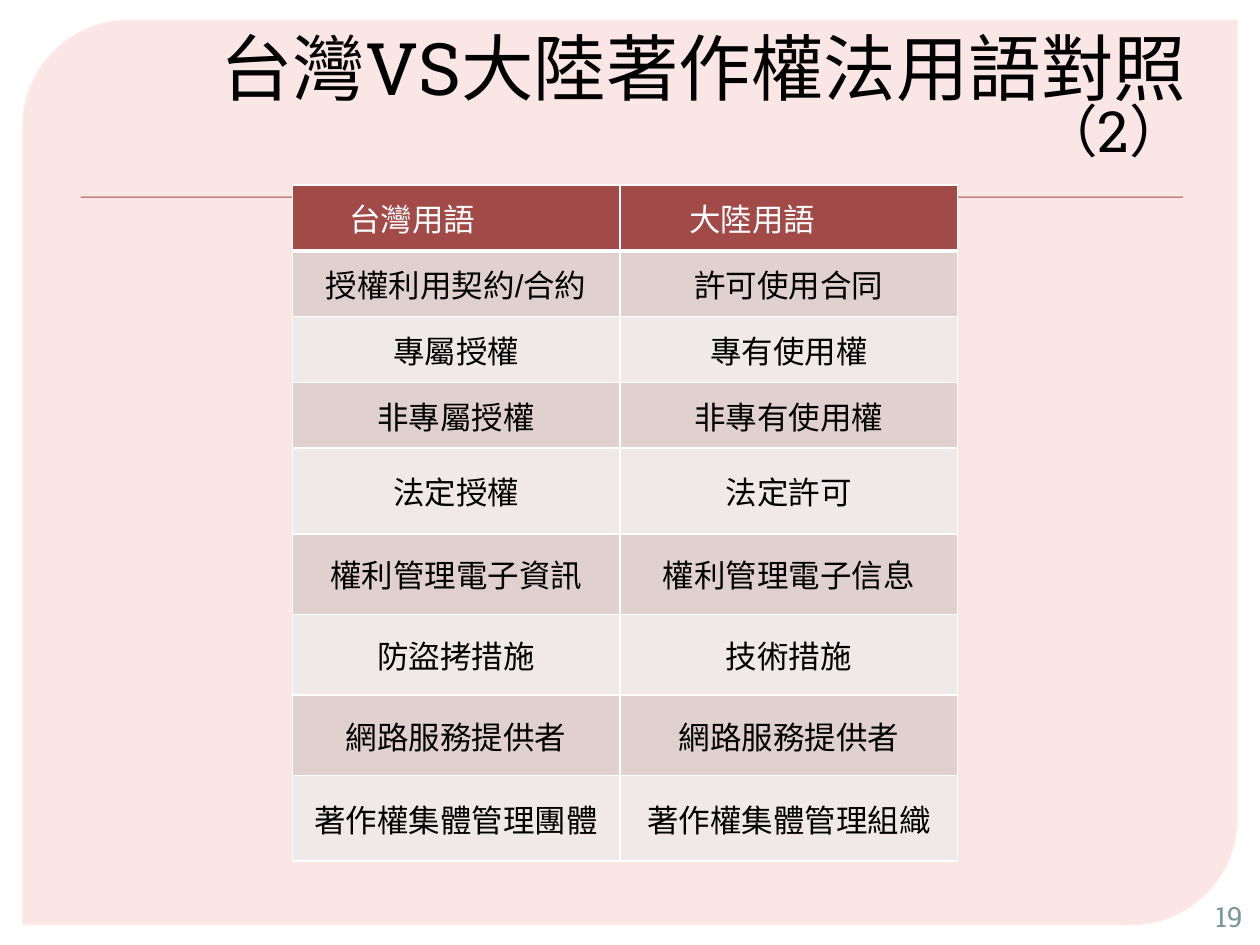
"""Build a slide comparing Taiwan and mainland copyright terms."""
from lxml import etree
from pptx import Presentation
from pptx.dml.color import RGBColor
from pptx.enum.shapes import MSO_SHAPE
from pptx.enum.text import MSO_ANCHOR, PP_ALIGN
from pptx.oxml.ns import qn
from pptx.util import Inches, Pt

PANEL, RULE = MSO_SHAPE.ROUND_2_DIAG_RECTANGLE, MSO_SHAPE.RECTANGLE
LEFT, CENTER, RIGHT = PP_ALIGN.LEFT, PP_ALIGN.CENTER, PP_ALIGN.RIGHT
MIDDLE, BOTTOM = MSO_ANCHOR.MIDDLE, MSO_ANCHOR.BOTTOM

TITLE = [("台灣VS大陸著作權法用語對照", "title"), ("（2）", "part")]
PAGE_NUMBER = [("19", "number")]
TERMS = [
    ("台灣用語", "大陸用語"),
    ("授權利用契約/合約", "許可使用合同"),
    ("專屬授權", "專有使用權"),
    ("非專屬授權", "非專有使用權"),
    ("法定授權", "法定許可"),
    ("權利管理電子資訊", "權利管理電子信息"),
    ("防盜拷措施", "技術措施"),
    ("網路服務提供者", "網路服務提供者"),
    ("著作權集體管理團體", "著作權集體管理組織"),
]

THEME = {
    "panel": "F9DADA", "panel_line": "FFECEC", "accent": "A24A48",
    "bands": ("F0E9E9", "E0D0CF"), "border": "FFFFFF",
    "title": {"name": "Roboto Slab", "size": 41.4, "color": "000000"},
    "part": {"name": "Roboto Slab", "size": 32.4, "color": "000000"},
    "number": {"name": "Roboto Slab", "size": 16, "color": "7C999A"},
    "header": {"name": "Arial", "size": 18, "color": "FFFFFF"},
    "body": {"name": "Arial", "size": 18, "color": "000000"},
}

SLIDE_SIZE = Inches(10), Inches(7.5)
PLACES = {
    "panel": (1.8, 2.13, 96.4, 95.73),
    "rule": (6.4, 20.8, 87.5, 0.13),
    "title": (5.1, 4.8, 90, 12.53),
    "table": (23.2, 19.6, 52.8, 71.33),
    "number": (94.5, 94.93, 5.1, 4),
}
COLUMN_SHARES = [26, 26.8]
ROW_SHARES = [6.96] * 4 + [9.07] + [8.53] * 3 + [9.07]
HEADER_INDENTS = [4.5, 5.5]


def across(share):
    return round(SLIDE_SIZE[0] * share / 100)


def down(share):
    return round(SLIDE_SIZE[1] * share / 100)


def place(name):
    left, top, width, height = PLACES[name]
    return across(left), down(top), across(width), down(height)


def apply(target, values):
    for name, value in values.items():
        setattr(target, name, value)


def paint(fill, color):
    fill.solid()
    fill.fore_color.rgb = RGBColor.from_string(color)


def write(frame, spans, align):
    para = frame.paragraphs[0]
    para.alignment = align
    for text, style in spans:
        span = para.add_run()
        span.text = text
        look = THEME[style]
        apply(span.font, {"name": look["name"], "size": Pt(look["size"])})
        span.font.color.rgb = RGBColor.from_string(look["color"])
    return para


def add_panel(page):
    panel = page.shapes.add_shape(PANEL, *place("panel"))
    panel.shadow.inherit = False
    panel.adjustments[0] = 0.118
    panel.adjustments[1] = 0
    paint(panel.fill, THEME["panel"])
    paint(panel.line.fill, THEME["panel_line"])
    panel.line.width = Pt(0.87)
    colors = panel.element.spPr.iter(qn("a:srgbClr"))
    for color, opacity in zip(list(colors), (65, 88)):
        etree.SubElement(color, qn("a:alpha"), val=str(opacity * 1000))


def add_rule(page):
    rule = page.shapes.add_shape(RULE, *place("rule"))
    rule.shadow.inherit = False
    paint(rule.fill, THEME["accent"])
    rule.line.fill.background()


def add_text(page, name, spans, anchor, **margins):
    box = page.shapes.add_textbox(*place(name))
    apply(box.text_frame, {"word_wrap": True, "vertical_anchor": anchor, **margins})
    return write(box.text_frame, spans, RIGHT)


def add_borders(cell, widths):
    properties = cell._tc.get_or_add_tcPr()
    for index, (side, width) in enumerate(widths.items()):
        line = etree.Element(qn(f"a:ln{side}"), w=str(Pt(width)))
        solid = etree.SubElement(line, qn("a:solidFill"))
        etree.SubElement(solid, qn("a:srgbClr"), val=THEME["border"])
        properties.insert(index, line)


def add_terms(page):
    table = page.shapes.add_table(len(TERMS), len(COLUMN_SHARES), *place("table")).table
    for column, share in zip(table.columns, COLUMN_SHARES):
        column.width = across(share)
    for row, share in zip(table.rows, ROW_SHARES):
        row.height = down(share)
    for row, terms in enumerate(TERMS):
        header = row == 0
        for column, term in enumerate(terms):
            cell = table.cell(row, column)
            cell.vertical_anchor = MIDDLE
            if header:
                cell.margin_left = across(HEADER_INDENTS[column])
            paint(cell.fill, THEME["accent"] if header else THEME["bands"][row % 2])
            add_borders(cell, {"L": 1, "R": 1, "T": 1, "B": 3 if header else 1})
            style = "header" if header else "body"
            write(cell.text_frame, [(term, style)], LEFT if header else CENTER)


def main():
    deck = Presentation()
    deck.slide_width, deck.slide_height = SLIDE_SIZE
    page = deck.slides.add_slide(deck.slide_layouts[6])
    add_panel(page)
    add_rule(page)
    add_text(page, "title", TITLE, BOTTOM, margin_bottom=0).line_spacing = 0.8
    add_terms(page)
    add_text(page, "number", PAGE_NUMBER, MIDDLE, margin_top=0, margin_bottom=0)
    deck.save("out.pptx")


if __name__ == "__main__":
    main()
